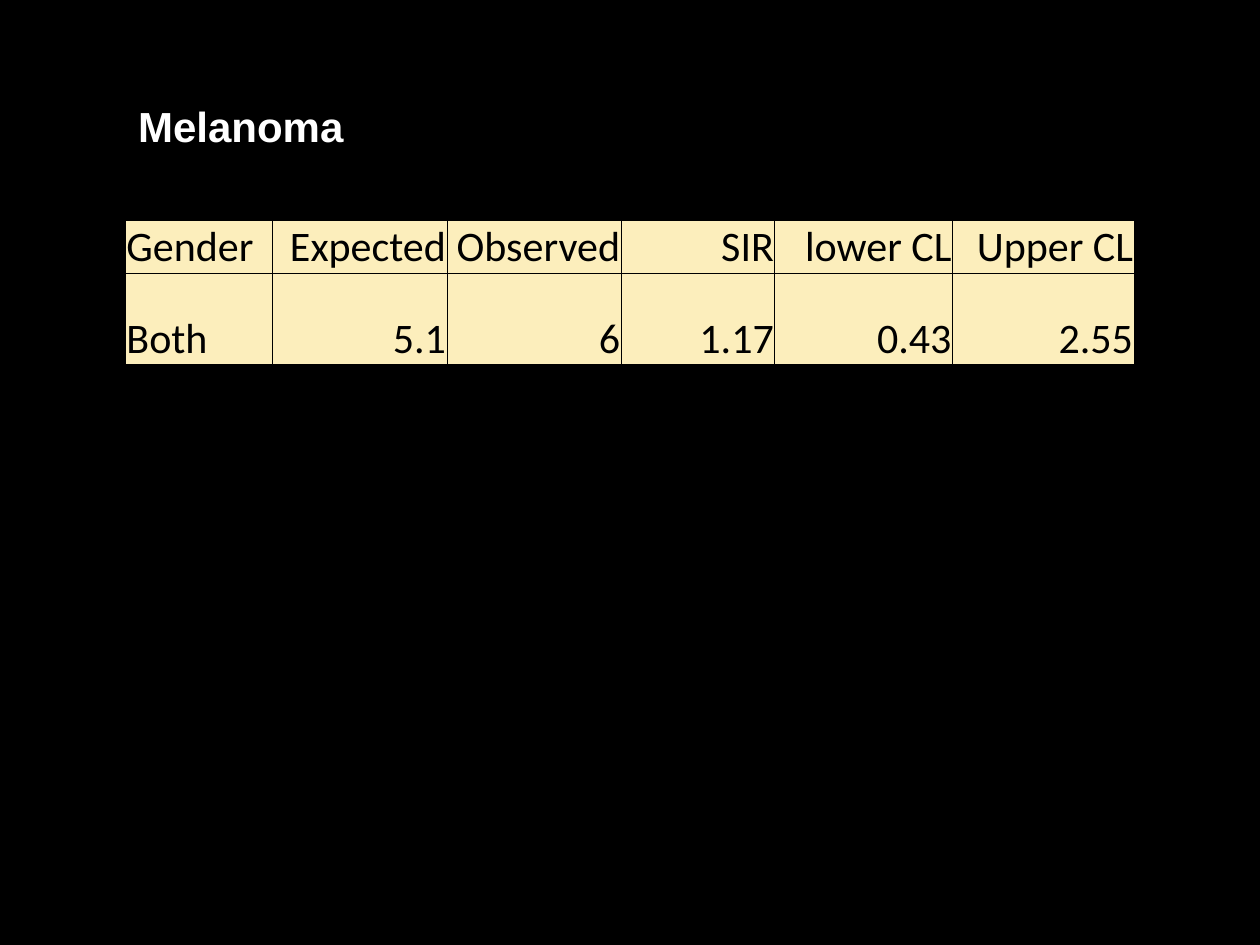
from lxml.etree import SubElement
from pptx import Presentation
from pptx.dml.color import RGBColor
from pptx.enum.text import MSO_ANCHOR, MSO_AUTO_SIZE, PP_ALIGN
from pptx.oxml.ns import qn
from pptx.util import Cm, Pt

BLACK = RGBColor(0x00, 0x00, 0x00)
WHITE = RGBColor(0xFF, 0xFF, 0xFF)
CREAM = RGBColor(0xFC, 0xEE, 0xBC)

TITLE_FONT = {"name": "Arial", "size": Pt(24), "bold": True}
CELL_FONT = {"name": "Calibri", "size": Pt(24), "bold": False}
CELL_FORMAT = {
    "vertical_anchor": MSO_ANCHOR.BOTTOM,
    "margin_left": Cm(0.02),
    "margin_top": Cm(0.02),
    "margin_right": Cm(0.02),
    "margin_bottom": Cm(0),
}
TITLE_FRAME = {
    "word_wrap": True,
    "auto_size": MSO_AUTO_SIZE.NONE,
    "vertical_anchor": MSO_ANCHOR.TOP,
}

RISK_ROWS = [
    ["Gender", "Expected", "Observed", "SIR", "lower CL", "Upper CL"],
    ["Both", "5.1", "6", "1.17", "0.43", "2.55"],
]
COLUMN_WIDTHS = [2.97, 3.51, 3.51, 3.1, 3.58, 3.66]
ROW_HEIGHTS = [1.04, 1.85]


def apply_format(target, values):
    for attribute, value in values.items():
        setattr(target, attribute, value)


def format_paragraph(paragraph, font_values, color, alignment):
    paragraph.alignment = alignment
    apply_format(paragraph.font, font_values)
    paragraph.font.color.rgb = color


def add_borders(cell, color, width):
    properties = cell._tc.get_or_add_tcPr()
    for side in ("a:lnL", "a:lnR", "a:lnT", "a:lnB"):
        border = SubElement(properties, qn(side), w=str(width))
        fill = SubElement(border, qn("a:solidFill"))
        SubElement(fill, qn("a:srgbClr"), val=str(color))


def place_title(slide, left, top, width, height):
    heading = slide.shapes.title
    apply_format(heading, {"left": left, "top": top, "width": width, "height": height})
    heading.text = "Melanoma"
    apply_format(heading.text_frame, TITLE_FRAME)
    format_paragraph(heading.text_frame.paragraphs[0], TITLE_FONT, WHITE, PP_ALIGN.LEFT)


def place_risk_table(slide, left, top, width, height):
    risks = slide.shapes.add_table(
        len(RISK_ROWS), len(COLUMN_WIDTHS), left, top, width, height
    ).table
    apply_format(risks, {"first_row": False, "horz_banding": False})
    for column, share in zip(risks.columns, COLUMN_WIDTHS):
        column.width = round(width * share / sum(COLUMN_WIDTHS))
    for row, share in zip(risks.rows, ROW_HEIGHTS):
        row.height = round(height * share / sum(ROW_HEIGHTS))
    for row, entries in zip(risks.rows, RISK_ROWS):
        for index, (cell, entry) in enumerate(zip(row.cells, entries)):
            cell.text = entry
            apply_format(cell, CELL_FORMAT)
            add_borders(cell, BLACK, Pt(0.5))
            cell.fill.solid()
            cell.fill.fore_color.rgb = CREAM
            alignment = PP_ALIGN.RIGHT if index else PP_ALIGN.LEFT
            format_paragraph(cell.text_frame.paragraphs[0], CELL_FONT, BLACK, alignment)


def main():
    deck = Presentation()
    apply_format(deck, {"slide_width": Cm(25.4), "slide_height": Cm(19.05)})
    slide = deck.slides.add_slide(deck.slide_layouts.get_by_name("Title Only"))
    slide.background.fill.solid()
    slide.background.fill.fore_color.rgb = BLACK
    left = Cm(2.53)
    place_title(slide, left, Cm(1.9), Cm(6.78), Cm(1.3))
    place_risk_table(
        slide, left, Cm(4.45), Cm(sum(COLUMN_WIDTHS)), Cm(sum(ROW_HEIGHTS))
    )
    deck.save("out.pptx")


if __name__ == "__main__":
    main()
